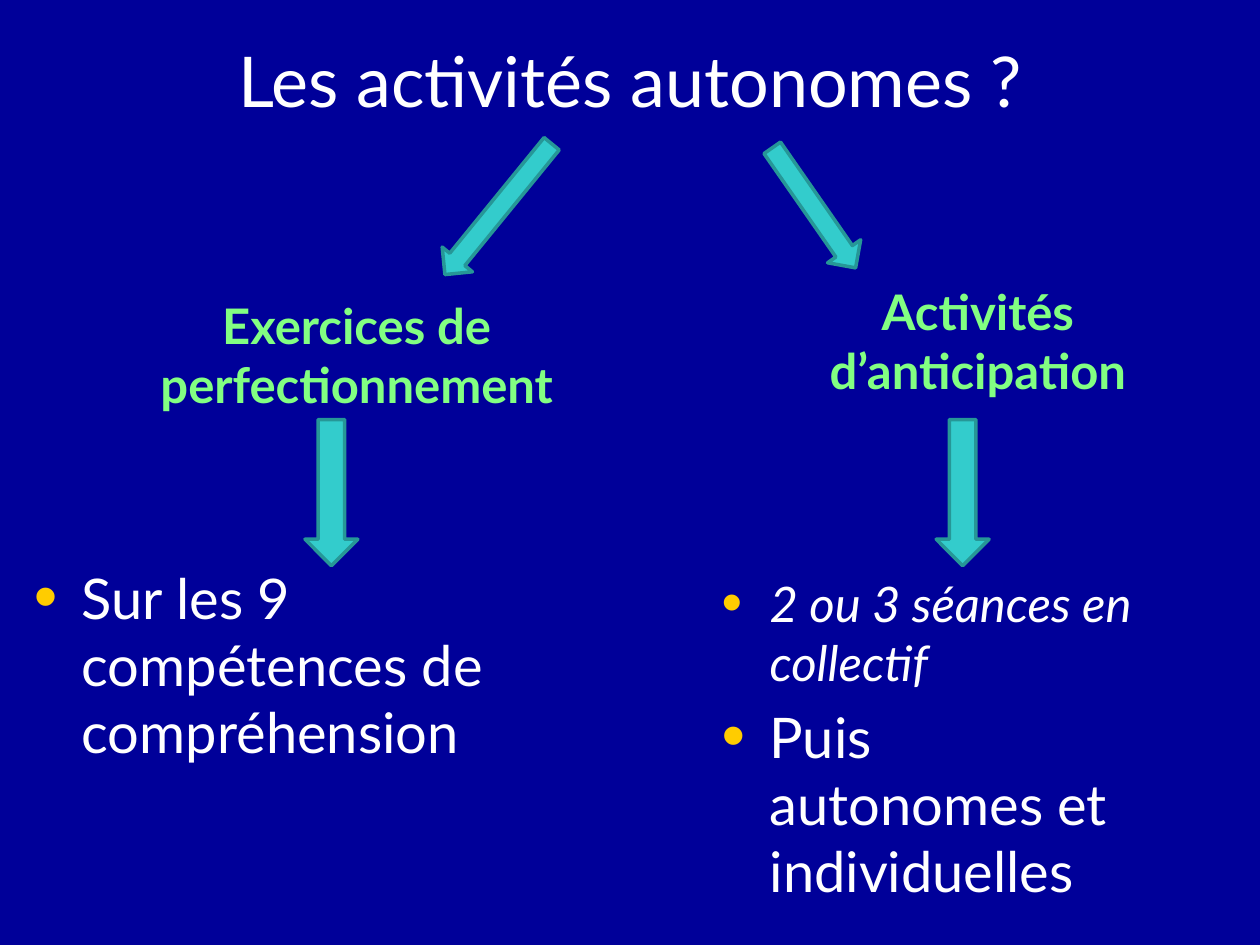
from lxml.etree import SubElement
from pptx import Presentation
from pptx.dml.color import RGBColor
from pptx.enum.shapes import MSO_SHAPE
from pptx.enum.text import MSO_ANCHOR, PP_ALIGN
from pptx.oxml.ns import qn
from pptx.util import Inches, Pt

NAVY = RGBColor(0x00, 0x00, 0x99)
WHITE = RGBColor(0xFF, 0xFF, 0xFF)
GREEN = RGBColor(0x82, 0xFF, 0x82)
YELLOW = RGBColor(0xFF, 0xCC, 0x00)
TURQUOISE = RGBColor(0x33, 0xCC, 0xCC)
TEAL = RGBColor(0x26, 0x97, 0x97)
FONT = "Lato"


def add_span(para, text, size, color, bold=False, italic=False):
    span = para.add_run()
    span.text = text
    span.font.name = FONT
    span.font.size = Pt(size)
    span.font.color.rgb = color
    span.font.bold = bold
    span.font.italic = italic


def add_bullet(para):
    props = para._p.get_or_add_pPr()
    props.set("marL", str(Inches(0.38)))
    props.set("indent", str(Inches(-0.38)))
    color = SubElement(props, qn("a:buClr"))
    SubElement(color, qn("a:srgbClr"), val=str(YELLOW))
    SubElement(props, qn("a:buSzPct"), val="120000")
    SubElement(props, qn("a:buFont"), typeface="Arial")
    SubElement(props, qn("a:buChar"), char="•")


deck = Presentation()
deck.slide_width, deck.slide_height = Inches(10), Inches(7.5)
page = deck.slides.add_slide(deck.slide_layouts[5])
page.background.fill.solid()
page.background.fill.fore_color.rgb = NAVY

# Title
title = page.shapes.title
title.left, title.top = Inches(0), Inches(0.01)
title.width, title.height = Inches(10), Inches(1.24)
title.text_frame.vertical_anchor = MSO_ANCHOR.MIDDLE
para = title.text_frame.paragraphs[0]
para.alignment = PP_ALIGN.CENTER
add_span(para, "Les activités autonomes ?", 40, WHITE)

# Branch headings
headings = [
    (0.62, 2.23, 4.42, 1.1, "Exercices de perfectionnement"),
    (5.75, 2.19, 4.02, 1.03, "Activités d’anticipation"),
]
for left, top, width, height, text in headings:
    box = page.shapes.add_textbox(Inches(left), Inches(top), Inches(width), Inches(height))
    box.text_frame.word_wrap = True
    box.text_frame.vertical_anchor = MSO_ANCHOR.BOTTOM
    para = box.text_frame.paragraphs[0]
    para.alignment = PP_ALIGN.CENTER
    add_span(para, text, 28, GREEN, bold=True)

# Bulleted details: text, size, italic
details = [
    (0.17, 4.42, 4.58, 2, [("Sur les 9 compétences de compréhension", 32, False)]),
    (5.63, 4.5, 3.6, 2.79, [("2 ou 3 séances en collectif", 28, True),
                            ("Puis autonomes et individuelles", 32, False)]),
]
for left, top, width, height, items in details:
    box = page.shapes.add_textbox(Inches(left), Inches(top), Inches(width), Inches(height))
    frame = box.text_frame
    frame.word_wrap = True
    for index, (text, size, italic) in enumerate(items):
        para = frame.add_paragraph() if index else frame.paragraphs[0]
        add_bullet(para)
        if index:
            para.space_before = Pt(0.2 * size)
        add_span(para, text, size, WHITE, italic=italic)

# Block arrows: left, top, width, height, rotation
arrows = [
    (3.8, 0.99, 0.31, 1.34, 39.2),
    (6.3, 1.07, 0.32, 1.16, 325.2),
    (2.42, 3.33, 0.42, 1.16, 0),
    (7.43, 3.33, 0.42, 1.16, 0),
]
for left, top, width, height, rotation in arrows:
    arrow = page.shapes.add_shape(
        MSO_SHAPE.DOWN_ARROW, Inches(left), Inches(top), Inches(width), Inches(height))
    arrow.rotation = rotation
    arrow.shadow.inherit = False
    arrow.fill.solid()
    arrow.fill.fore_color.rgb = TURQUOISE
    arrow.line.color.rgb = TEAL
    arrow.line.width = Pt(2)

deck.save("out.pptx")
